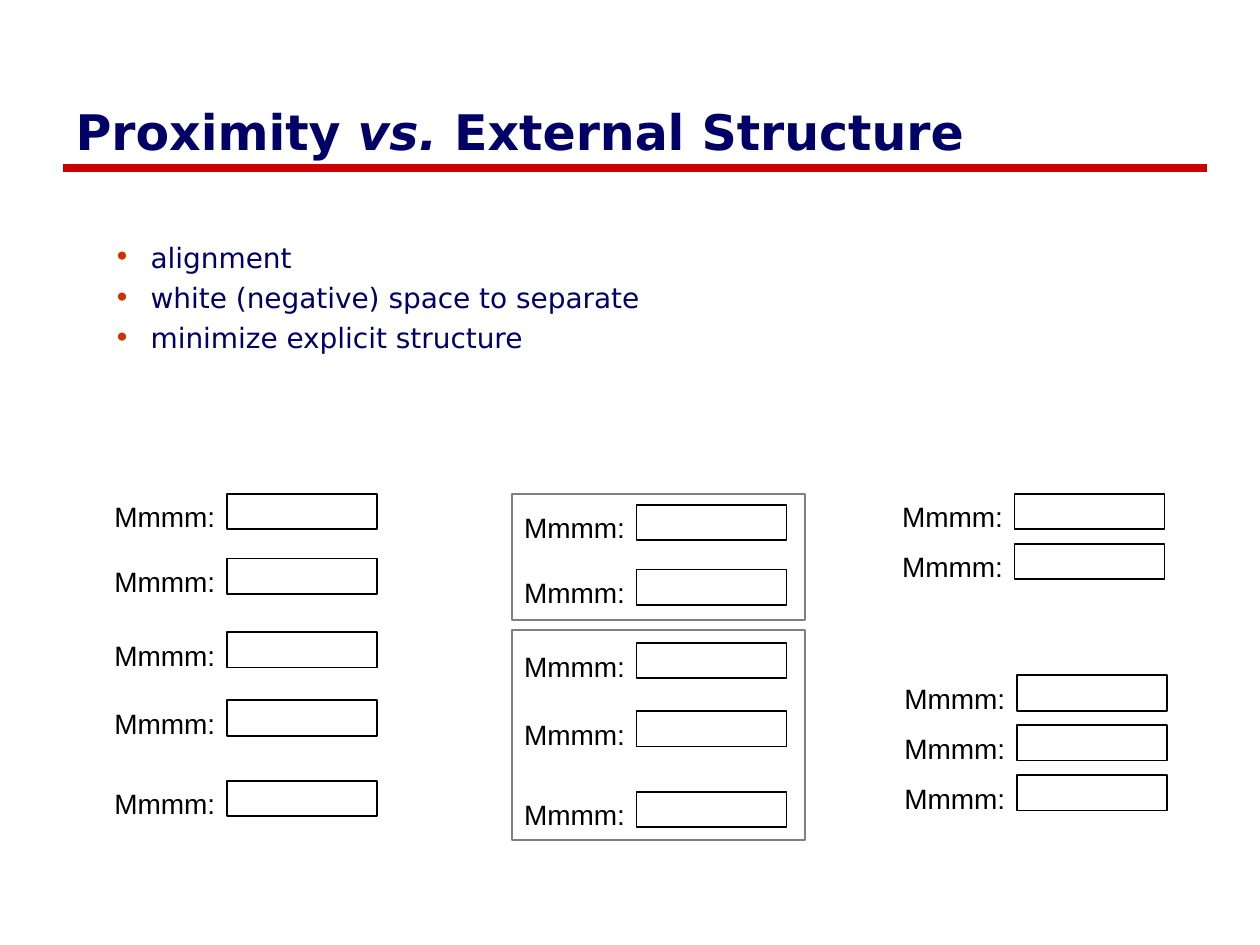
import pptx
import pptx.util
import pptx.dml.color
import pptx.enum.shapes
import pptx.enum.text
from dataclasses import dataclass
from lxml import etree

Pt = pptx.util.Pt


@dataclass(frozen=True)
class Theme:
    """Holds the colours, fonts and type sizes."""
    navy: str = "000066"
    red: str = "CC0000"
    rust: str = "CC3300"
    black: str = "000000"
    white: str = "FFFFFF"
    grey: str = "808080"
    sans: str = "DejaVu Sans"
    form: str = "Arial"
    head: float = 28
    text: float = 16


THEME = Theme()
EVEN = (0, 37, 79, 118, 164)
STEP = 28.5


def tint(code):
    """Turn a hex code into a colour."""
    return pptx.dml.color.RGBColor.from_string(code)


def add_run(para, text, face, size, code, bold=False, slant=False):
    """Add one styled run to a paragraph."""
    run = para.add_run()
    run.text = text
    font = run.font
    font.name, font.size = face, Pt(size)
    font.bold, font.italic = bold, slant
    font.color.rgb = tint(code)


def set_node(para, tag, **attrs):
    """Append a drawing element to the paragraph properties."""
    props = para._p.get_or_add_pPr()
    space = props.nsmap["a"]
    return etree.SubElement(props, f"{{{space}}}{tag}", **attrs)


def add_rect(group, left, top, width, height, line, fill=None):
    """Draw a thin outlined rectangle."""
    kind = pptx.enum.shapes.MSO_SHAPE.RECTANGLE
    rect = group.shapes.add_shape(kind, Pt(left), Pt(top), Pt(width), Pt(height))
    rect.shadow.inherit = False
    if fill:
        rect.fill.solid()
        rect.fill.fore_color.rgb = tint(fill)
    else:
        rect.fill.background()
    rect.line.color.rgb = tint(line)
    rect.line.width = Pt(1)


def add_title(slide, left, top, width, height):
    """Place the title and the rule along its lower edge."""
    title = slide.shapes.title
    title.left, title.top = Pt(left), Pt(top)
    title.width, title.height = Pt(width), Pt(height)
    frame = title.text_frame
    frame.word_wrap = True
    frame.auto_size = pptx.enum.text.MSO_AUTO_SIZE.NONE
    frame.vertical_anchor = pptx.enum.text.MSO_ANCHOR.MIDDLE
    para = frame.paragraphs[0]
    para.alignment = pptx.enum.text.PP_ALIGN.LEFT
    for text, slant in (("Proximity ", False), ("vs. ", True), ("External Structure", False)):
        add_run(para, text, THEME.sans, THEME.head, THEME.navy, True, slant)
    base = top + height
    kind = pptx.enum.shapes.MSO_CONNECTOR.STRAIGHT
    rule = slide.shapes.add_connector(kind, Pt(left), Pt(base), Pt(left + width), Pt(base))
    rule.line.color.rgb = tint(THEME.red)
    rule.line.width = Pt(4.5)
    props = rule._element.spPr
    etree.SubElement(props, f"{{{props.nsmap['a']}}}effectLst")


def add_list(slide, left, top, width, height):
    """Place the bullet list."""
    box = slide.shapes.add_textbox(Pt(left), Pt(top), Pt(width), Pt(height))
    frame = box.text_frame
    frame.word_wrap = True
    items = ("alignment", "white (negative) space to separate", "minimize explicit structure")
    for num, text in enumerate(items):
        para = frame.add_paragraph() if num else frame.paragraphs[0]
        para.space_before = Pt(3.7)
        props = para._p.get_or_add_pPr()
        props.set("marL", str(Pt(42.5)))
        props.set("indent", str(Pt(-21)))
        colour = set_node(para, "buClr")
        etree.SubElement(colour, f"{{{props.nsmap['a']}}}srgbClr", val=THEME.rust)
        set_node(para, "buFont", typeface=THEME.sans)
        set_node(para, "buChar", char="•")
        add_run(para, text, THEME.sans, THEME.text, THEME.navy)


def add_rows(group, left, top, gaps):
    """Place labelled fields at the given offsets below the top."""
    for gap in gaps:
        label = group.shapes.add_textbox(Pt(left), Pt(top + gap), Pt(72.7), Pt(26.6))
        frame = label.text_frame
        frame.word_wrap = False
        frame.auto_size = pptx.enum.text.MSO_AUTO_SIZE.SHAPE_TO_FIT_TEXT
        add_run(frame.paragraphs[0], "Mmmm:", THEME.form, THEME.text, THEME.black)
        add_rect(group, left + 71.3, top + gap, 85.7, 20.2, THEME.black, THEME.white)


def add_near(slide, left, top):
    """Place the form grouped by white space."""
    group = slide.shapes.add_group_shape()
    add_rows(group, left, top, [STEP * num for num in range(2)])
    add_rows(group, left + 1.3, top + 103.7, [STEP * num for num in range(3)])


def add_plain(slide, left, top):
    """Place the form without grouping."""
    add_rows(slide.shapes.add_group_shape(), left, top, EVEN)


def add_framed(slide, left, top, width):
    """Place the form grouped by frames."""
    group = slide.shapes.add_group_shape()
    for drop, height in ((0, 72), (78, 120)):
        add_rect(group, left, top + drop, width, height, THEME.grey)
    add_rows(group, left, top + 6.2, EVEN)


def main():
    """Build and save the slide."""
    deck = pptx.Presentation()
    deck.slide_width, deck.slide_height = Pt(720), Pt(540)
    slide = deck.slides.add_slide(deck.slide_layouts[5])
    add_title(slide, 36, 54, 654, 42)
    add_list(slide, 36.5, 134, 652.5, 374.5)
    add_near(slide, 508.4, 282.2)
    add_plain(slide, 58.3, 282.2)
    add_framed(slide, 292.4, 282.2, 167.8)
    deck.save("out.pptx")


if __name__ == "__main__":
    main()
